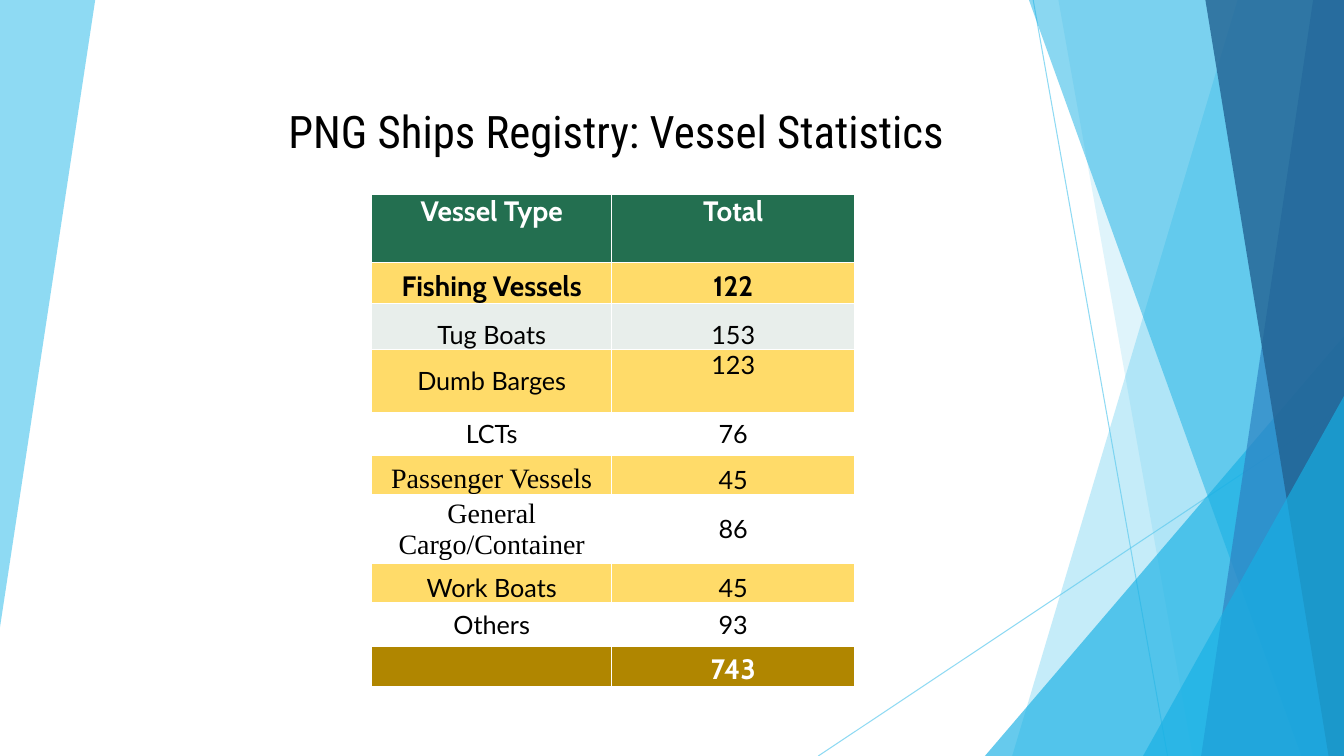
"""Build the vessel statistics slide with its faceted background and table."""
from lxml import etree
from pptx import Presentation
from pptx.dml.color import RGBColor
from pptx.enum.shapes import MSO_CONNECTOR, MSO_SHAPE
from pptx.enum.text import MSO_ANCHOR, PP_ALIGN
from pptx.oxml.ns import qn
from pptx.util import Pt

STRAIGHT = MSO_CONNECTOR.STRAIGHT
TRIANGLE = MSO_SHAPE.ISOSCELES_TRIANGLE
TOP, MIDDLE, BOTTOM = MSO_ANCHOR.TOP, MSO_ANCHOR.MIDDLE, MSO_ANCHOR.BOTTOM
CENTER = PP_ALIGN.CENTER
WIDTH, HEIGHT = 960, 540
SKY, AZURE, BLUE, NAVY = "5FCBEF", "17B0E4", "2E83C3", "226292"
GREEN, YELLOW, MIST, GOLD = "236F50", "FFDB69", "E8EEEB", "B08600"
WHITE, BLACK = "FFFFFF", "000000"
HEADING, BODY, SERIF = ("Cabin", 20, True), ("Lato", 18, False), ("Times New Roman", 20, False)


def set_color(fill, color, opacity=100):
    """Give a fill a solid colour and an opacity in percent."""
    fill.solid()
    fill.fore_color.rgb = RGBColor.from_string(color)
    if opacity < 100:
        node = next(fill._xPr.iter(qn("a:srgbClr")))
        etree.SubElement(node, qn("a:alpha"), val=str(opacity * 1000))


deck = Presentation()
deck.slide_width, deck.slide_height = Pt(WIDTH), Pt(HEIGHT)
page = deck.slides.add_slide(deck.slide_layouts[6])
shapes = page.shapes

for x1, y1, x2, y2 in [(738, 0, 834, HEIGHT), (WIDTH, 290, 584.5, HEIGHT)]:
    line = shapes.add_connector(STRAIGHT, Pt(x1), Pt(y1), Pt(x2), Pt(y2))
    line.line.width = Pt(0.75)
    set_color(line.line.fill, SKY, 70)
    etree.SubElement(line._element.spPr, qn("a:effectLst"))


def right_band(top, bottom):
    """Return the corners of a band that reaches the right edge."""
    return [(top, 0), (WIDTH, 0), (WIDTH, HEIGHT), (bottom, HEIGHT)]


facets = [
    ([(0, 0), (68, 0), (0, 448)], SKY, 70),
    (right_band(884, 723), SKY, 36),
    (right_band(756, 852), SKY, 20),
    ((703.5, 240), AZURE, 66),
    (right_band(735, 929.5), AZURE, 50),
    (right_band(938, 858), BLUE, 70),
    (right_band(861, 949), NAVY, 80),
    ((816.5, 283), AZURE, 66),
]
for outline, color, opacity in facets:
    if isinstance(outline, list):
        corners = [(Pt(x), Pt(y)) for x, y in outline]
        builder = shapes.build_freeform(*corners[0])
        builder.add_line_segments(corners[1:], close=True)
        facet = builder.convert_to_shape()
    else:
        left, top = outline
        facet = shapes.add_shape(TRIANGLE, Pt(left), Pt(top), Pt(WIDTH - left), Pt(HEIGHT - top))
        facet.adjustments[0] = 1
    facet.shadow.inherit = False
    facet.line.fill.background()
    set_color(facet.fill, color, opacity)

title_box = shapes.add_textbox(Pt(206), Pt(62), Pt(600), Pt(62))
title = title_box.text_frame
title.word_wrap = True
title.vertical_anchor = MIDDLE
title.margin_left = title.margin_right = title.margin_top = title.margin_bottom = 0
para = title.paragraphs[0]
para.text = "PNG Ships Registry: Vessel Statistics"
para.font.name, para.font.size = "Roboto Condensed", Pt(32)
set_color(para.font.fill, BLACK)

rows = [
    (48.2, GREEN, WHITE, ("Vessel Type", HEADING, TOP), ("Total", HEADING, TOP)),
    (29.3, YELLOW, BLACK, ("Fishing Vessels", HEADING, BOTTOM), ("122", HEADING, BOTTOM)),
    (32.9, MIST, BLACK, ("Tug Boats", BODY, BOTTOM), ("153", BODY, BOTTOM)),
    (45.4, YELLOW, BLACK, ("Dumb Barges", BODY, MIDDLE), ("123", BODY, TOP)),
    (30, WHITE, BLACK, ("LCTs", BODY, MIDDLE), ("76", BODY, MIDDLE)),
    (28.6, YELLOW, BLACK, ("Passenger Vessels", SERIF, BOTTOM), ("45", BODY, BOTTOM)),
    (48.9, WHITE, BLACK, ("General Cargo/Container", SERIF, MIDDLE), ("86", BODY, MIDDLE)),
    (28.2, YELLOW, BLACK, ("Work Boats", BODY, BOTTOM), ("45", BODY, BOTTOM)),
    (31.4, WHITE, BLACK, ("Others", BODY, MIDDLE), ("93", BODY, MIDDLE)),
    (28.6, GOLD, WHITE, ("", HEADING, BOTTOM), ("743", HEADING, BOTTOM)),
]
table_height = sum(row[0] for row in rows)
table = shapes.add_table(len(rows), 2, Pt(265.5), Pt(139.2), Pt(345), Pt(table_height)).table
table.columns[0].width, table.columns[1].width = Pt(171.5), Pt(173.5)
for row_index, (row_height, back, ink, *entries) in enumerate(rows):
    table.rows[row_index].height = Pt(row_height)
    for column_index, (text, (face, size, bold), anchor) in enumerate(entries):
        cell = table.cell(row_index, column_index)
        cell.margin_left = cell.margin_right = cell.margin_top = cell.margin_bottom = 0
        cell.vertical_anchor = anchor
        para = cell.text_frame.paragraphs[0]
        para.text, para.alignment = text, CENTER
        para.font.name, para.font.size, para.font.bold = face, Pt(size), bold
        set_color(para.font.fill, ink)
        properties = cell._tc.get_or_add_tcPr()
        for side in ("lnL", "lnR", "lnT", "lnB"):
            border = etree.SubElement(properties, qn(f"a:{side}"), w=str(Pt(1)))
            solid = etree.SubElement(border, qn("a:solidFill"))
            etree.SubElement(solid, qn("a:srgbClr"), val=WHITE)
        set_color(cell.fill, back)

deck.save("out.pptx")
